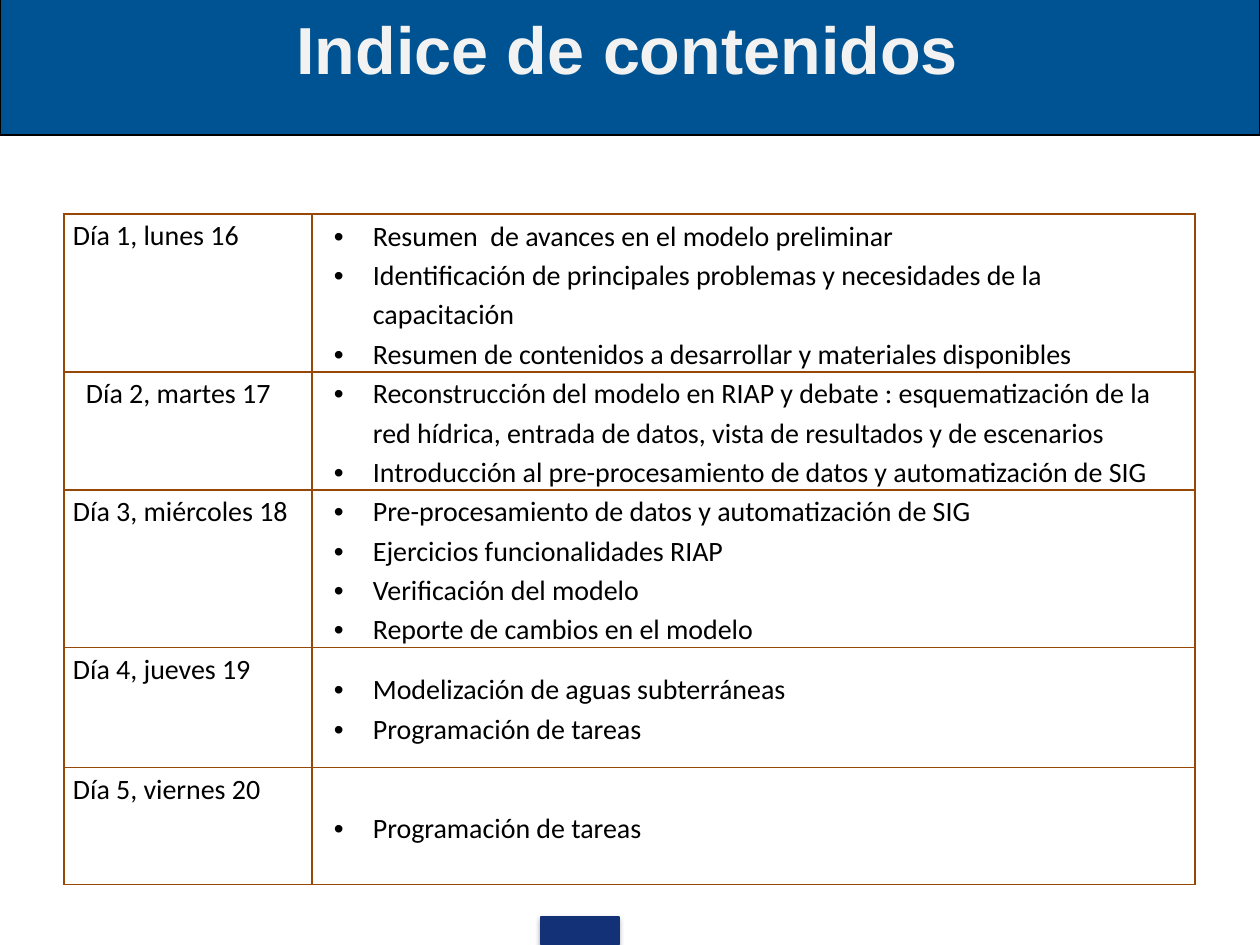
"""Build the course contents slide: a title band and a table of five days."""
import pptx
import pptx.dml.color
import pptx.enum.shapes
import pptx.enum.text
import pptx.oxml
import pptx.oxml.ns
import pptx.util

PX = 914400 // 126
NS = pptx.oxml.ns.nsdecls("a")


def color(hex_value):
    return pptx.dml.color.RGBColor.from_string(hex_value)


def style_text(paragraph, size, font_name, hex_value, bold=False):
    for run in paragraph.runs:
        run.font.size = pptx.util.Pt(size)
        run.font.name = font_name
        run.font.bold = bold
        run.font.color.rgb = color(hex_value)


agenda = [
    ("Día 1, lunes 16", 158, 0, [
        "Resumen  de avances en el modelo preliminar",
        "Identificación de principales problemas y necesidades de la capacitación",
        "Resumen de contenidos a desarrollar y materiales disponibles"]),
    ("Día 2, martes 17", 118, 13, [
        "Reconstrucción del modelo en RIAP y debate : esquematización de la "
        "red hídrica, entrada de datos, vista de resultados y de escenarios",
        "Introducción al pre-procesamiento de datos y automatización de SIG"]),
    ("Día 3, miércoles 18", 157, 0, [
        "Pre-procesamiento de datos y automatización de SIG",
        "Ejercicios funcionalidades RIAP",
        "Verificación del modelo",
        "Reporte de cambios en el modelo"]),
    ("Día 4, jueves 19", 120, 0, [
        "Modelización de aguas subterráneas",
        "Programación de tareas"]),
    ("Día 5, viernes 20", 117, 0, ["Programación de tareas"]),
]

prs = pptx.Presentation()
prs.slide_width = 1260 * PX
prs.slide_height = 945 * PX
slide = prs.slides.add_slide(prs.slide_layouts[5])
shapes = slide.shapes

bands = [
    (541, 917, 78, 28, "133176", "133176"),
    (0, -4, 1260, 139, "005392", "000000"),
]
for left, top, width, height, fill, outline in bands:
    band = shapes.add_shape(pptx.enum.shapes.MSO_SHAPE.RECTANGLE,
                            left * PX, top * PX, width * PX, height * PX)
    band.shadow.inherit = False
    band.fill.solid()
    band.fill.fore_color.rgb = color(fill)
    band.line.color.rgb = color(outline)
    band.line.width = pptx.util.Pt(0.75)
    if top > 0:
        band._element.spPr.find(pptx.oxml.ns.qn("a:effectLst")).append(pptx.oxml.parse_xml(
            f'<a:outerShdw {NS} blurRad="39370" dist="22860" dir="5400000" rotWithShape="0">'
            '<a:srgbClr val="000000"><a:alpha val="35000"/></a:srgbClr></a:outerShdw>'))

heading = shapes.title
shapes._spTree.append(heading._element)
heading.left, heading.top = -5 * PX, -4 * PX
heading.width, heading.height = 1265 * PX, 157 * PX
heading.text_frame.text = "Indice de contenidos"
heading.text_frame.auto_size = pptx.enum.text.MSO_AUTO_SIZE.NONE
heading.text_frame.vertical_anchor = pptx.enum.text.MSO_ANCHOR.TOP
heading.text_frame.margin_top = 12 * PX
heading.text_frame.paragraphs[0].alignment = pptx.enum.text.PP_ALIGN.CENTER
style_text(heading.text_frame.paragraphs[0], 38, "Arial", "F2F2F2", bold=True)

total_height = sum(height for _, height, _, _ in agenda)
schedule = shapes.add_table(len(agenda), 2, 64 * PX, 214 * PX,
                            1131 * PX, total_height * PX).table
schedule.first_row = False
schedule.horz_banding = False
schedule.columns[0].width = 248 * PX
schedule.columns[1].width = 883 * PX

for row, (day, height, day_indent, topics) in zip(schedule.rows, agenda):
    row.height = height * PX
    day_cell, topics_cell = row.cells
    day_cell.text_frame.text = day
    topics_cell.text_frame.text = "\n".join(topics)
    topics_cell.vertical_anchor = pptx.enum.text.MSO_ANCHOR.MIDDLE
    day_cell.text_frame.paragraphs[0]._p.get_or_add_pPr().set("marL", str(day_indent * PX))
    for topic in topics_cell.text_frame.paragraphs:
        properties = topic._p.get_or_add_pPr()
        properties.set("marL", str(52 * PX))
        properties.set("indent", str(-39 * PX))
        properties.append(pptx.oxml.parse_xml(f'<a:buFont {NS} typeface="Arial"/>'))
        properties.append(pptx.oxml.parse_xml(f'<a:buChar {NS} char="•"/>'))
    for cell in (day_cell, topics_cell):
        cell.margin_left = cell.margin_right = 9 * PX
        cell.margin_top = cell.margin_bottom = 0
        for side in ("lnL", "lnR", "lnT", "lnB"):
            cell._tc.get_or_add_tcPr().append(pptx.oxml.parse_xml(
                f'<a:{side} {NS} w="12700"><a:solidFill><a:srgbClr val="984806"/>'
                f'</a:solidFill></a:{side}>'))
        cell.fill.background()
        for paragraph in cell.text_frame.paragraphs:
            paragraph.line_spacing = 1.15
            style_text(paragraph, 16, "Calibri", "000000")

prs.save("out.pptx")
